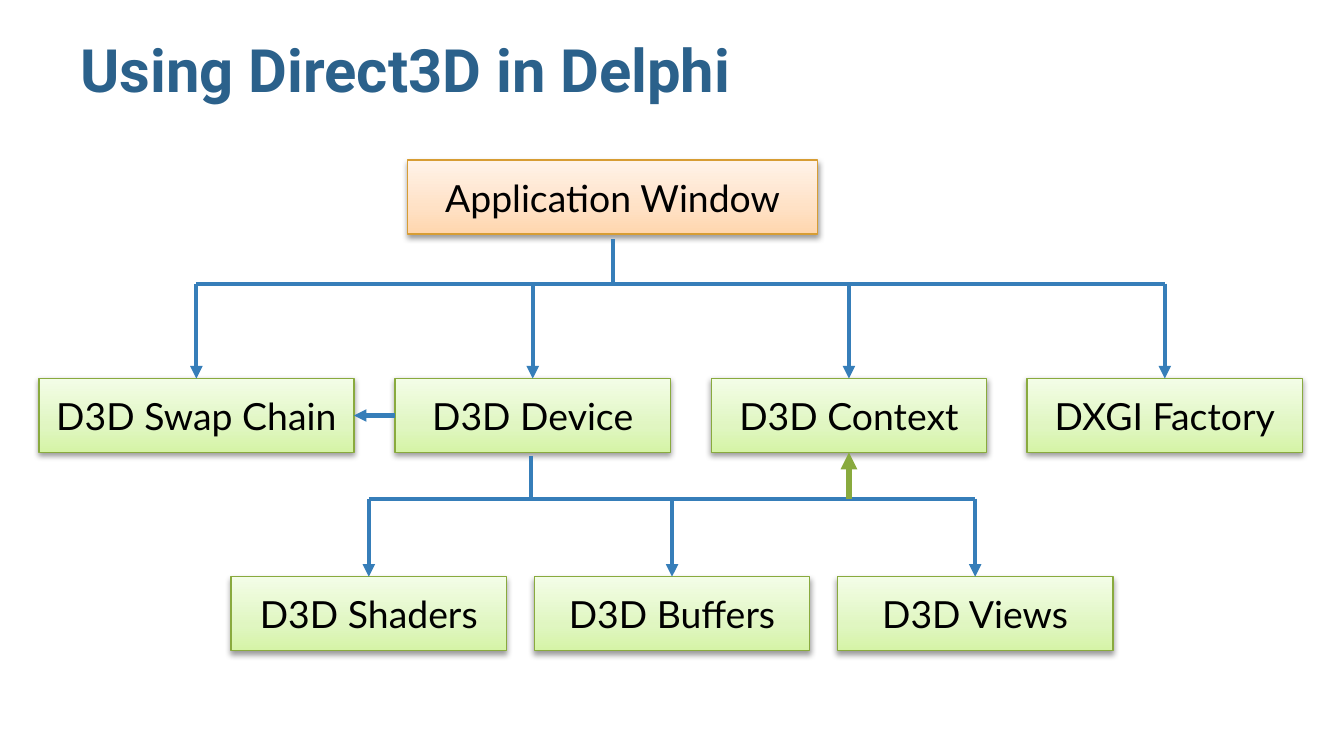
"""Build a slide showing how Direct3D objects relate in a Delphi application."""
from copy import deepcopy

from lxml import etree
from pptx import Presentation
from pptx.dml.color import RGBColor
from pptx.enum import shapes, text
from pptx.oxml import ns
from pptx.util import Pt

COLORS = {"title": "2B618B", "text": "000000", "arrow": "367EB9",
          "orange": "D79D34", "green": "89AA3E"}
GRADIENTS = {"orange": ["FFD6AD", "FFE1C5", "FFF3E9"],
             "green": ["D5F4A6", "E0F6C1", "F3FDE7"]}
BOX_HEIGHT = 39.6
BOX_WIDTH = 147.6


def add_box(label, center, top, width=BOX_WIDTH, color="green"):
    shape = slide.shapes.add_shape(
        shapes.MSO_SHAPE.RECTANGLE, Pt(center - width / 2), Pt(top), Pt(width), Pt(BOX_HEIGHT))
    shape.fill.gradient()
    shape.fill.gradient_angle = 90
    stop_list = shape._element.spPr.find(".//" + ns.qn("a:gsLst"))
    stop_list.append(deepcopy(stop_list[-1]))
    for stop, position, shade in zip(shape.fill.gradient_stops, (0, 0.35, 1), GRADIENTS[color]):
        stop.position = position
        stop.color.rgb = RGBColor.from_string(shade)
    shape.line.color.rgb = RGBColor.from_string(COLORS[color])
    shape.line.width = Pt(0.75)

    shape.shadow.inherit = False
    effects = shape._element.spPr.find(ns.qn("a:effectLst"))
    shadow = etree.SubElement(effects, ns.qn("a:outerShdw"), blurRad=str(Pt(3.1)),
                              dist=str(Pt(1.6)), dir="5400000", rotWithShape="0")
    shade = etree.SubElement(shadow, ns.qn("a:srgbClr"), val="000000")
    etree.SubElement(shade, ns.qn("a:alpha"), val="38000")

    frame = shape.text_frame
    frame.vertical_anchor = text.MSO_ANCHOR.MIDDLE
    paragraph = frame.paragraphs[0]
    paragraph.text = label
    paragraph.alignment = text.PP_ALIGN.CENTER
    paragraph.font.name = "Lato"
    paragraph.font.size = Pt(20)
    paragraph.font.color.rgb = RGBColor.from_string(COLORS["text"])


def add_line(x1, y1, x2, y2, arrow=False, color="arrow", width=2.25):
    connector = slide.shapes.add_connector(
        shapes.MSO_CONNECTOR.STRAIGHT, Pt(x1), Pt(y1), Pt(x2), Pt(y2))
    connector.line.color.rgb = RGBColor.from_string(COLORS[color])
    connector.line.width = Pt(width)
    if arrow:
        etree.SubElement(connector.line._get_or_add_ln(), ns.qn("a:tailEnd"), type="triangle")
    etree.SubElement(connector._element.spPr, ns.qn("a:effectLst"))


presentation = Presentation()
presentation.slide_width = Pt(720)
presentation.slide_height = Pt(405)
slide = presentation.slides.add_slide(presentation.slide_layouts[6])

title = slide.shapes.add_textbox(Pt(36), Pt(11.5), Pt(648), Pt(51.8))
frame = title.text_frame
frame.word_wrap = True
frame.vertical_anchor = text.MSO_ANCHOR.BOTTOM
frame.margin_left = frame.margin_right = frame.margin_top = frame.margin_bottom = Pt(7.2)
paragraph = frame.paragraphs[0]
paragraph.text = "Using Direct3D in Delphi"
paragraph.font.name = "Roboto"
paragraph.font.size = Pt(32)
paragraph.font.bold = True
paragraph.font.color.rgb = RGBColor.from_string(COLORS["title"])

add_box("Application Window", 328.2, 85.8, 219.6, "orange")

levels = [
    (328.2, 128.2, 152, 202.8, [("D3D Swap Chain", 105.2, 168.8), ("D3D Device", 285.4, BOX_WIDTH),
                                ("D3D Context", 454.8, BOX_WIDTH),
                                ("DXGI Factory", 624, BOX_WIDTH)]),
    (284.6, 244.2, 267.2, 309, [("D3D Shaders", 197.6, BOX_WIDTH), ("D3D Buffers", 360, BOX_WIDTH),
                                ("D3D Views", 522.4, BOX_WIDTH)]),
]
for stem, stem_top, bus, box_top, boxes in levels:
    add_line(stem, stem_top, stem, bus)
    add_line(boxes[0][1], bus, boxes[-1][1], bus)
    for label, center, width in boxes:
        add_box(label, center, box_top, width)
        add_line(center, bus, center, box_top, arrow=True)

add_line(211.6, 222.6, 189.6, 222.6, arrow=True)
add_line(454.8, 267.2, 454.8, 242.4, arrow=True, color="green", width=3)

presentation.save("out.pptx")
